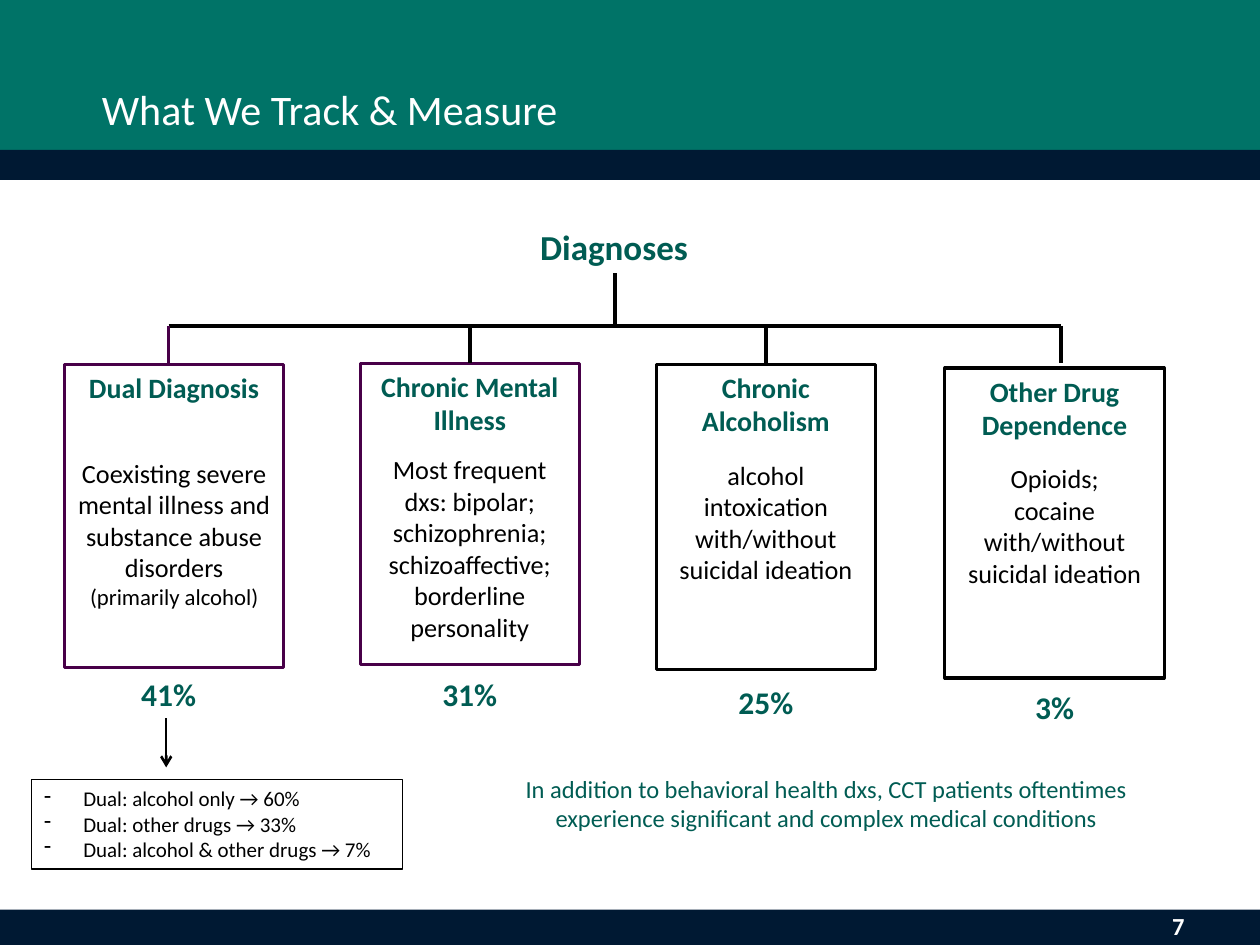
from lxml import etree
from pptx import Presentation
from pptx.dml.color import RGBColor
from pptx.enum.shapes import MSO_CONNECTOR, MSO_SHAPE
from pptx.enum.text import MSO_ANCHOR, MSO_AUTO_SIZE, PP_ALIGN
from pptx.oxml.ns import qn
from pptx.util import Cm, Pt

GREEN = RGBColor(0x00, 0x73, 0x67)
DARK_GREEN = RGBColor(0x00, 0x5C, 0x53)
NAVY = RGBColor(0x00, 0x19, 0x33)
PURPLE = RGBColor(0x48, 0x00, 0x48)
BLACK = RGBColor(0x00, 0x00, 0x00)
WHITE = RGBColor(0xFF, 0xFF, 0xFF)
RECTANGLE, STRAIGHT = MSO_SHAPE.RECTANGLE, MSO_CONNECTOR.STRAIGHT
LEFT, CENTER, RIGHT = PP_ALIGN.LEFT, PP_ALIGN.CENTER, PP_ALIGN.RIGHT
TOP, MIDDLE = MSO_ANCHOR.TOP, MSO_ANCHOR.MIDDLE


def write(shape, lines, alignment, anchor=TOP):
    """Fill a shape with (text, size, color, bold, space before) paragraphs."""
    frame = shape.text_frame
    frame.text = "\n".join(line[0] for line in lines)
    frame.word_wrap = True
    frame.auto_size = MSO_AUTO_SIZE.NONE
    frame.vertical_anchor = anchor
    for paragraph, (_, size, color, bold, space) in zip(frame.paragraphs, lines):
        paragraph.alignment = alignment
        paragraph.space_before = Pt(space)
        for run in paragraph.runs:
            run.font.name = "Calibri"
            run.font.size = Pt(size)
            run.font.bold = bold
            run.font.color.rgb = color


def add_line(x1, y1, x2, y2, color=BLACK, width=2):
    line = slide.shapes.add_connector(STRAIGHT, x1, y1, x2, y2)
    line.line.color.rgb = color
    line.line.width = Pt(width)
    etree.SubElement(line._element.spPr, qn("a:effectLst"))
    return line


presentation = Presentation()
presentation.slide_width, presentation.slide_height = Cm(25.4), Cm(19.05)
slide = presentation.slides.add_slide(presentation.slide_layouts[1])

# Header and footer bands, placed behind the placeholders
bands = [(0, 3.33, GREEN), (3.02, 0.61, NAVY), (18.34, 0.71, NAVY)]
for index, (top, height, color) in enumerate(bands):
    band = slide.shapes.add_shape(RECTANGLE, 0, Cm(top), Cm(25.4), Cm(height))
    band.shadow.inherit = False
    band.fill.solid()
    band.fill.fore_color.rgb = color
    band.line.fill.background()
    slide.shapes._spTree.insert(2 + index, band._element)

# Title and root of the tree
title, root = slide.placeholders
title.left, title.top, title.width, title.height = Cm(1.8), Cm(1.32), Cm(20.32), Cm(1.75)
write(title, [("What We Track & Measure", 24, WHITE, False, 0)], LEFT, MIDDLE)
root.left, root.top, root.width, root.height = Cm(7.67), Cm(4.42), Cm(9.42), Cm(1.32)
write(root, [("Diagnoses", 20, DARK_GREEN, True, 0)], CENTER)
properties = root.text_frame.paragraphs[0]._p.get_or_add_pPr()
properties.set("marL", "0")
properties.set("indent", "0")
etree.SubElement(properties, qn("a:buNone"))

# Trunk and crossbar
crossbar = Cm(6.57)
add_line(Cm(12.4), Cm(5.51), Cm(12.4), crossbar)
add_line(Cm(3.4), crossbar, Cm(21.39), crossbar)

# Diagnosis boxes: left, top, height, outline, drop color, drop offset,
# percent, percent offset, percent top, heading, gap, body lines
diagnoses = [
    (1.3, 7.34, 6.12, PURPLE, PURPLE, -0.11, "41%", -0.11, 13.49, "Dual Diagnosis", 30.5,
     [("Coexisting severe mental illness and substance abuse disorders", 15),
      ("(primarily alcohol)", 13)]),
    (7.26, 7.32, 6.07, PURPLE, BLACK, 0, "31%", 0, 13.49, "Chronic Mental Illness", 9.8,
     [("Most frequent dxs: bipolar; schizophrenia; schizoaffective; "
       "borderline personality", 15)]),
    (13.23, 7.34, 6.15, BLACK, BLACK, 0, "25%", 0, 13.64, "Chronic Alcoholism", 12.2,
     [("alcohol intoxication with/without suicidal ideation", 15)]),
    (19.05, 7.42, 6.25, BLACK, BLACK, 0.13, "3%", 0, 13.74, "Other Drug Dependence", 12.2,
     [("Opioids;", 15), ("cocaine", 15), ("with/without suicidal ideation", 15)]),
]
for (left, top, height, outline, drop_color, drop_offset, percent, percent_offset,
     percent_top, heading, gap, body) in diagnoses:
    box = slide.shapes.add_shape(RECTANGLE, Cm(left), Cm(top), Cm(4.42), Cm(height))
    box.shadow.inherit = False
    box.fill.background()
    box.line.color.rgb = outline
    box.line.width = Pt(1.75)
    lines = [(heading, 16, DARK_GREEN, True, 0)]
    for index, (text, size) in enumerate(body):
        lines.append((text, size, BLACK, False, 0 if index else gap))
    write(box, lines, CENTER)

    middle = box.left + box.width // 2
    drop_x = middle + Cm(drop_offset)
    drop = add_line(drop_x, crossbar, drop_x, Cm(7.32), drop_color)
    if drop_offset == 0:
        drop.end_connect(box, 0)

    label = slide.shapes.add_textbox(
        middle + Cm(percent_offset) - Cm(1.05), Cm(percent_top), Cm(2.1), Cm(1.47))
    write(label, [(percent, 18, DARK_GREEN, True, 0)], CENTER)

# Arrow to the dual diagnosis breakdown
arrow = add_line(Cm(3.35), Cm(14.48), Cm(3.35), Cm(15.47), width=1.5)
etree.SubElement(arrow.line._get_or_add_ln(), qn("a:tailEnd"), type="arrow")

breakdown = slide.shapes.add_shape(RECTANGLE, Cm(0.64), Cm(15.72), Cm(7.47), Cm(1.8))
breakdown.shadow.inherit = False
breakdown.fill.background()
breakdown.line.color.rgb = BLACK
breakdown.line.width = Pt(0.75)
shares = ["Dual: alcohol only → 60%", "Dual: other drugs → 33%",
          "Dual: alcohol & other drugs → 7%"]
write(breakdown, [(share, 12, BLACK, False, 0) for share in shares], LEFT)
for paragraph in breakdown.text_frame.paragraphs:
    properties = paragraph._p.get_or_add_pPr()
    properties.set("marL", str(Cm(0.79)))
    properties.set("indent", str(-Cm(0.79)))
    etree.SubElement(properties, qn("a:buChar"), char="-")

# Closing remark
remark = slide.shapes.add_textbox(Cm(8.89), Cm(15.47), Cm(14.27), Cm(1.45))
write(remark, [("In addition to behavioral health dxs, CCT patients oftentimes experience "
                "significant and complex medical conditions", 14, DARK_GREEN, False, 0)], CENTER)
remark.text_frame.margin_left = Cm(1.52)

# Slide number
number = slide.shapes.add_textbox(Cm(18.21), Cm(18.24), Cm(5.92), Cm(0.79))
write(number, [("7", 14, WHITE, True, 0)], RIGHT)

presentation.save("out.pptx")
